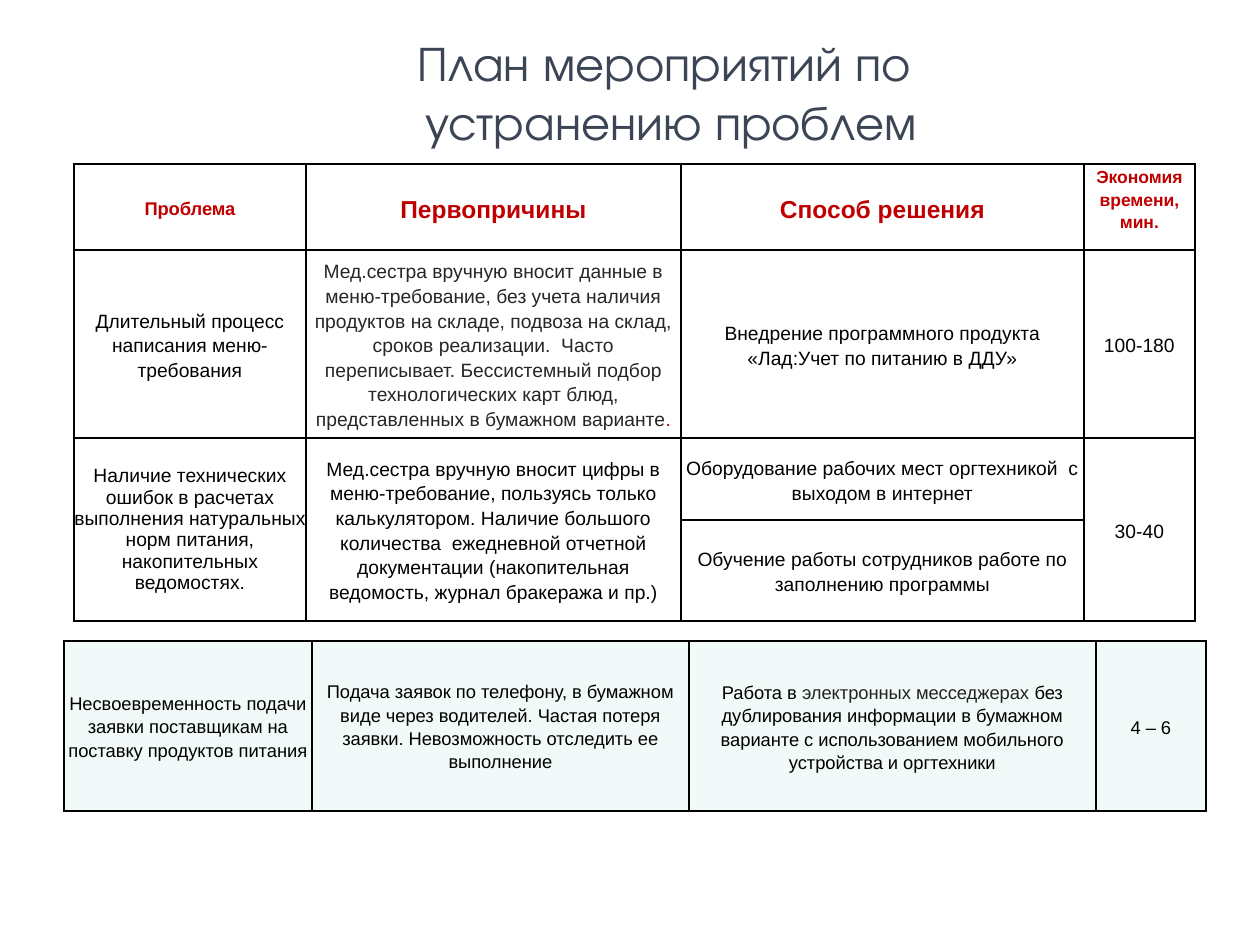
from pptx import Presentation, util as u
from pptx.dml.color import RGBColor
from pptx.enum import text
from pptx.oxml import parse_xml
from pptx.oxml.ns import nsdecls

PX = 914400 / 126
BLACK, RED = "000000", "C00000"


def emu(px):
    return u.Emu(round(px * PX))


def write(p, txt, size=11, color=BLACK, bold=False, font="Arial", spacing=1.15):
    p.alignment = text.PP_ALIGN.CENTER
    p.line_spacing = spacing
    r = p.add_run()
    r.text = txt
    r.font.size = u.Pt(size)
    r.font.name = font
    r.font.bold = bold
    r.font.color.rgb = RGBColor.from_string(color)


prs = Presentation()
prs.slide_width, prs.slide_height = emu(1260), emu(945)
s = prs.slides.add_slide(prs.slide_layouts[5])

title = s.shapes.title
title.left, title.top, title.width, title.height = map(emu, (213, 26, 903, 131))
tf = title.text_frame
tf.word_wrap = False
tf.vertical_anchor = text.MSO_ANCHOR.MIDDLE
p = tf.paragraphs[0]
head = dict(size=28, color="3B4555", font="TeX Gyre Adventor", spacing=1.0)
write(p, "План мероприятий по", **head)
p.add_line_break()
write(p, " устранению проблем", **head)

plan = {
    (0, 0): [("Проблема", dict(size=10.5, color=RED, bold=True))],
    (0, 1): [("Первопричины", dict(size=14, color=RED, bold=True))],
    (0, 2): [("Способ решения", dict(size=14, color=RED, bold=True))],
    (0, 3): [("Экономия времени, мин.", dict(size=10, color=RED, bold=True))],
    (1, 0): [("Длительный процесс написания меню-требования", {})],
    (1, 1): [("Мед.сестра вручную вносит данные в меню-требование, без учета наличия "
              "продуктов на складе, подвоза на склад, сроков реализации.  Часто "
              "переписывает. Бессистемный подбор технологических карт блюд, "
              "представленных в бумажном варианте", dict(color="262626")),
             (".", dict(color=RED))],
    (1, 2): [("Внедрение программного продукта «Лад:Учет по питанию в ДДУ»", {})],
    (1, 3): [("100-180", {})],
    (2, 0): [("Наличие технических ошибок в расчетах выполнения натуральных норм "
              "питания, накопительных ведомостях.", dict(spacing=1.0))],
    (2, 1): [("Мед.сестра вручную вносит цифры в меню-требование, пользуясь только "
              "калькулятором. Наличие большого количества  ежедневной отчетной "
              "документации (накопительная ведомость, журнал бракеража и пр.)", {})],
    (2, 2): [("Оборудование рабочих мест оргтехникой  с выходом в интернет", {})],
    (2, 3): [("30-40", {})],
    (3, 2): [("Обучение работы сотрудников работе по заполнению программы", {})],
}
small = dict(size=10.5)
orders = {
    (0, 0): [("Несвоевременность подачи заявки поставщикам на поставку продуктов "
              "питания", small)],
    (0, 1): [("Подача заявок по телефону, в бумажном виде через водителей. Частая "
              "потеря заявки. Невозможность отследить ее выполнение", small)],
    (0, 2): [("Работа в ", small),
             ("электронных месседжерах", dict(size=10.5, color="222222")),
             (" без дублирования информации в бумажном варианте с использованием "
              "мобильного устройства и оргтехники", small)],
    (0, 3): [("4 – 6", small)],
}
tables = [
    (74, 164, [232, 375, 403, 111], [86, 188, 82, 101], "FFFFFF", plan,
     [(2, 0), (2, 1), (2, 3)], [(2, 0), (2, 1)]),
    (64, 641, [248, 377, 407, 110], [170], "F1F9F9", orders, [], [(0, 0), (0, 1)]),
]

for left, top, cols, rows, fill, content, merged, tight in tables:
    frame = s.shapes.add_table(len(rows), len(cols), emu(left), emu(top),
                               emu(sum(cols)), emu(sum(rows)))
    tbl = frame.table
    tbl.first_row = tbl.horz_banding = False
    for col, w in zip(tbl.columns, cols):
        col.width = emu(w)
    for row, h in zip(tbl.rows, rows):
        row.height = emu(h)
    for i, j in merged:
        tbl.cell(i, j).merge(tbl.cell(i + 1, j))
    for i in range(len(rows)):
        for j in range(len(cols)):
            cell = tbl.cell(i, j)
            side, upper = (0, 0) if (i, j) in tight else (4, 1)
            cell.margin_left = cell.margin_right = emu(side)
            cell.margin_top, cell.margin_bottom = emu(upper), 0
            cell.vertical_anchor = text.MSO_ANCHOR.MIDDLE
            if content is plan and (i, j) == (0, 3):
                cell.vertical_anchor = text.MSO_ANCHOR.TOP
            tcPr = cell._tc.get_or_add_tcPr()
            for edge in "LRTB":
                tcPr.append(parse_xml(
                    f'<a:ln{edge} {nsdecls("a")} w="12700"><a:solidFill>'
                    f'<a:srgbClr val="{BLACK}"/></a:solidFill></a:ln{edge}>'))
            cell.fill.solid()
            cell.fill.fore_color.rgb = RGBColor.from_string(fill)
            for txt, fmt in content.get((i, j), []):
                write(cell.text_frame.paragraphs[0], txt, **fmt)

prs.save("out.pptx")
